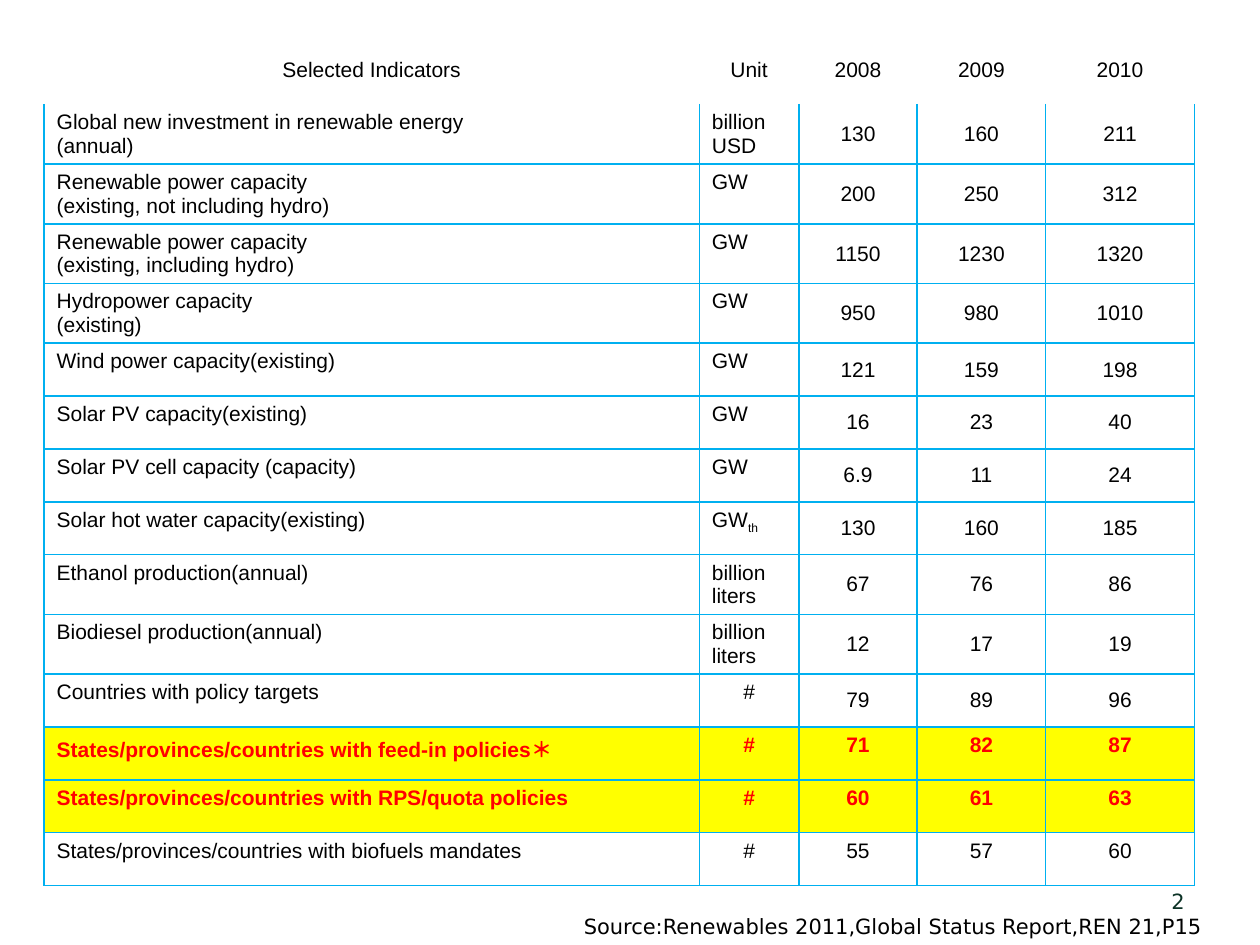
"""Build a slide with a table of renewable energy indicators for 2008 to 2010."""
from dataclasses import dataclass

import lxml.etree
import pptx
import pptx.dml.color
import pptx.enum.text
import pptx.oxml.ns
import pptx.util

COLOURS = {
    "text": "000000",
    "header_border": "FFFFFF",
    "border": "00B0F0",
    "key_text": "FF0000",
    "key_fill": "FFFF00",
    "page_number": "0C3226",
}
SLIDE_WIDTH = pptx.util.Inches(10)
SLIDE_HEIGHT = pptx.util.Inches(7.5)
COLUMN_PERCENTS = (52, 7.9, 9.4, 10.2, 11.8)
HEADER_PERCENT, FIRST_PERCENT, ROW_PERCENT = 7.33, 6.27, 5.6
ALIGN = pptx.enum.text.PP_ALIGN
ANCHOR = pptx.enum.text.MSO_ANCHOR


@dataclass(frozen=True)
class Indicator:
    label: str
    unit: str
    values: tuple[str, str, str]
    key: bool = False
    values_on_top: bool = False
    unit_subscript: str = ""


@dataclass(frozen=True)
class Note:
    text: str
    left: float
    top: float
    width: float
    height: float
    colour: str
    anchor: ANCHOR


HEADER = ("Selected Indicators", "Unit", "2008", "2009", "2010")
INDICATORS = (
    Indicator("Global new investment in renewable energy\n(annual)", "billion USD", ("130", "160", "211")),
    Indicator("Renewable power capacity\n(existing, not including hydro)", "GW", ("200", "250", "312")),
    Indicator("Renewable power capacity\n(existing, including hydro)", "GW", ("1150", "1230", "1320")),
    Indicator("Hydropower capacity\n(existing)", "GW", ("950", "980", "1010")),
    Indicator("Wind power capacity(existing)", "GW", ("121", "159", "198")),
    Indicator("Solar PV capacity(existing)", "GW", ("16", "23", "40")),
    Indicator("Solar PV cell capacity (capacity)", "GW", ("6.9", "11", "24")),
    Indicator("Solar hot water capacity(existing)", "GW", ("130", "160", "185"), unit_subscript="th"),
    Indicator("Ethanol production(annual)", "billion liters", ("67", "76", "86")),
    Indicator("Biodiesel production(annual)", "billion liters", ("12", "17", "19")),
    Indicator("Countries with policy targets", "#", ("79", "89", "96")),
    Indicator("States/provinces/countries with feed-in policies＊", "#", ("71", "82", "87"), True, True),
    Indicator("States/provinces/countries with RPS/quota policies", "#", ("60", "61", "63"), True, True),
    Indicator("States/provinces/countries with biofuels mandates", "#", ("55", "57", "60"), values_on_top=True),
)
NOTES = (
    Note("Source:Renewables 2011,Global Status Report,REN 21,P15", 2.7, 96, 93.7, 4, "text", ANCHOR.TOP),
    Note("2", 71.7, 92.67, 23.3, 5.33, "page_number", ANCHOR.MIDDLE),
)


def across(percent: float) -> int:
    return round(SLIDE_WIDTH * percent / 100)


def down(percent: float) -> int:
    return round(SLIDE_HEIGHT * percent / 100)


def style_text(frame, align: ALIGN, font_name: str, colour: str, bold: bool = False) -> None:
    for paragraph in frame.paragraphs:
        paragraph.alignment = align
        paragraph.font.size = pptx.util.Pt(12)
        paragraph.font.name = font_name
        paragraph.font.bold = bold
        paragraph.font.color.rgb = pptx.dml.color.RGBColor.from_string(COLOURS[colour])


def draw_borders(cell, colour: str, top_colour: str) -> None:
    properties = cell._tc.get_or_add_tcPr()
    sides = {"lnL": colour, "lnR": colour, "lnT": top_colour, "lnB": colour}
    for position, (side, side_colour) in enumerate(sides.items()):
        line = lxml.etree.Element(pptx.oxml.ns.qn(f"a:{side}"), w=str(pptx.util.Pt(1)))
        fill = lxml.etree.SubElement(line, pptx.oxml.ns.qn("a:solidFill"))
        lxml.etree.SubElement(fill, pptx.oxml.ns.qn("a:srgbClr"), val=COLOURS[side_colour])
        properties.insert(position, line)


def fill_cell(cell, text: str, align: ALIGN, anchor: ANCHOR, key: bool = False,
              border: str = "border", top_border: str = "border") -> None:
    cell.text = text
    cell.vertical_anchor = anchor
    style_text(cell.text_frame, align, "Arial", "key_text" if key else "text", key)
    if key:
        cell.fill.solid()
        cell.fill.fore_color.rgb = pptx.dml.color.RGBColor.from_string(COLOURS["key_fill"])
    else:
        cell.fill.background()
    draw_borders(cell, border, top_border)


def draw_indicator(table, row: int, indicator: Indicator) -> None:
    top_border = "header_border" if row == 1 else "border"
    unit_align = ALIGN.CENTER if indicator.unit == "#" else ALIGN.LEFT
    value_anchor = ANCHOR.TOP if indicator.values_on_top else ANCHOR.MIDDLE
    entries = [(indicator.label, ALIGN.LEFT, ANCHOR.TOP), (indicator.unit, unit_align, ANCHOR.TOP)]
    entries += [(value, ALIGN.CENTER, value_anchor) for value in indicator.values]
    for column, (text, align, anchor) in enumerate(entries):
        fill_cell(table.cell(row, column), text, align, anchor, indicator.key, top_border=top_border)
    if indicator.unit_subscript:
        subscript = table.cell(row, 1).text_frame.paragraphs[0].add_run()
        subscript.text = indicator.unit_subscript
        subscript._r.get_or_add_rPr().set("baseline", "-25000")


def draw_table(slide) -> None:
    row_percents = [HEADER_PERCENT, FIRST_PERCENT] + [ROW_PERCENT] * (len(INDICATORS) - 1)
    table = slide.shapes.add_table(
        len(row_percents), len(COLUMN_PERCENTS), across(3.5), down(3.73),
        across(sum(COLUMN_PERCENTS)), down(sum(row_percents)),
    ).table
    table.first_row = table.horz_banding = False
    for column, percent in zip(table.columns, COLUMN_PERCENTS):
        column.width = across(percent)
    for row, percent in zip(table.rows, row_percents):
        row.height = down(percent)
    for column, heading in enumerate(HEADER):
        fill_cell(table.cell(0, column), heading, ALIGN.CENTER, ANCHOR.MIDDLE,
                  border="header_border", top_border="header_border")
    for row, indicator in enumerate(INDICATORS, start=1):
        draw_indicator(table, row, indicator)


def draw_note(slide, note: Note) -> None:
    frame = slide.shapes.add_textbox(
        across(note.left), down(note.top), across(note.width), down(note.height)
    ).text_frame
    frame.word_wrap = True
    frame.vertical_anchor = note.anchor
    frame.text = note.text
    style_text(frame, ALIGN.RIGHT, "DejaVu Sans", note.colour)


def main() -> None:
    presentation = pptx.Presentation()
    presentation.slide_width = SLIDE_WIDTH
    presentation.slide_height = SLIDE_HEIGHT
    slide = presentation.slides.add_slide(presentation.slide_layouts[6])
    draw_table(slide)
    for note in NOTES:
        draw_note(slide, note)
    presentation.save("out.pptx")


if __name__ == "__main__":
    main()
